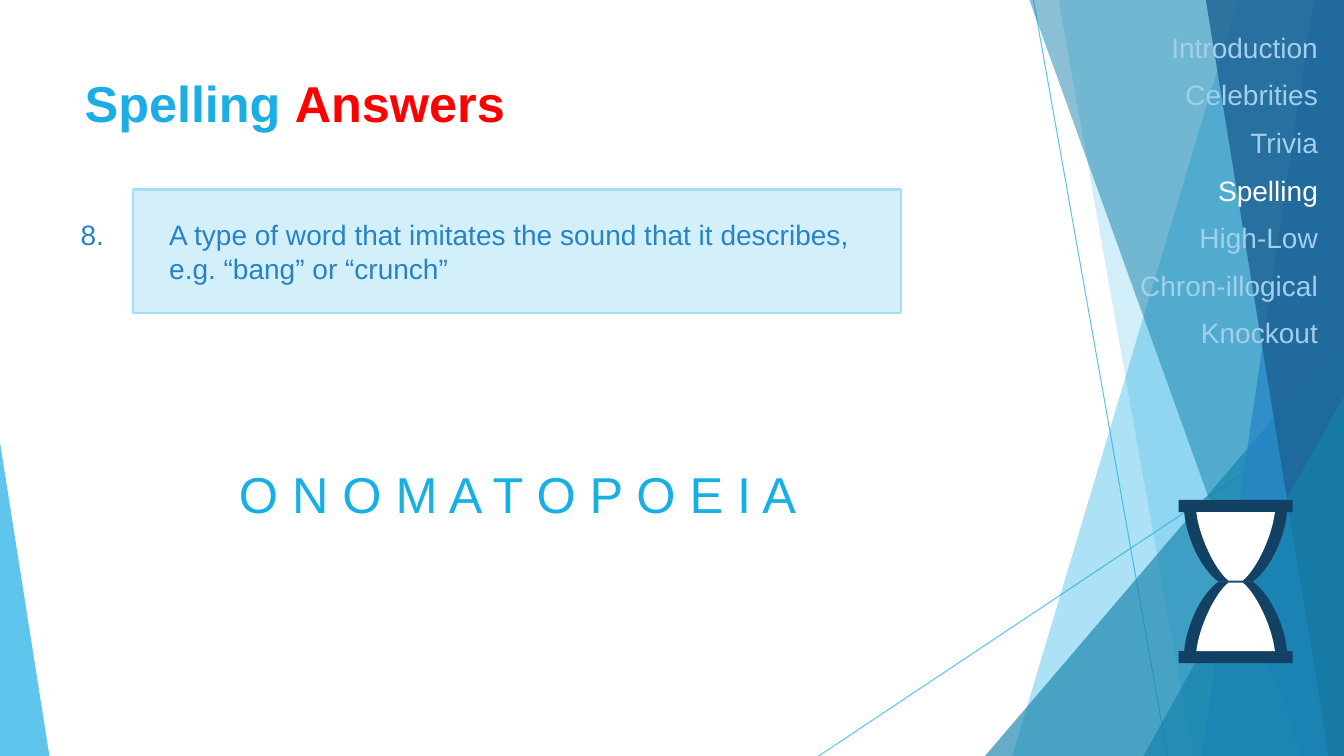
from pptx import Presentation
from pptx.util import Inches, Pt
from pptx.dml.color import RGBColor
from pptx.enum.shapes import MSO_CONNECTOR, MSO_SHAPE
from pptx.enum.text import MSO_ANCHOR, PP_ALIGN
from pptx.oxml.ns import qn
from lxml import etree

LINE = MSO_CONNECTOR.STRAIGHT
RECT = MSO_SHAPE.RECTANGLE
TOP, MIDDLE = MSO_ANCHOR.TOP, MSO_ANCHOR.MIDDLE
LEFT, CENTER, RIGHT = PP_ALIGN.LEFT, PP_ALIGN.CENTER, PP_ALIGN.RIGHT

W, H = 13.33, 7.5
COLORS = {
    "sky": "1CADE4", "teal": "1482AC", "blue": "2683C6", "navy": "1D6294",
    "red": "FF0000", "panel": "D2EFFA", "border": "A4DEF4", "answer": "17B0E4",
    "muted": "A3CEED", "white": "FFFFFF", "frame": "134163",
}
SECTIONS = ["Introduction", "Celebrities", "Trivia", "Spelling",
            "High-Low", "Chron-illogical", "Knockout"]

# Facets from back to front: corner points, colour, opacity in percent
FACETS = [
    ([(12.28, 0), (W, 0), (W, H), (10.04, H)], "sky", 36),
    ([(10.5, 0), (W, 0), (W, H), (11.83, H)], "sky", 20),
    ([(W, 3.33), (W, H), (9.77, H)], "teal", 66),
    ([(10.21, 0), (W, 0), (W, H), (12.91, H)], "teal", 50),
    ([(13.03, 0), (W, 0), (W, H), (11.92, H)], "blue", 70),
    ([(11.96, 0), (W, 0), (W, H), (13.18, H)], "navy", 80),
    ([(W, 3.93), (W, H), (11.34, H)], "teal", 66),
    ([(0, 4.39), (0.49, H), (0, H)], "sky", 70),
]
RAYS = [(10.25, 0, 11.58, H), (W, 4.03, 8.12, H)]


def rgb(name):
    return RGBColor.from_string(COLORS[name])


def set_alpha(shape, percent):
    color = next(shape._element.spPr.iter(qn("a:srgbClr")))
    etree.SubElement(color, qn("a:alpha"), val=str(percent * 1000))


def paint(shape, color, line=None):
    shape.shadow.inherit = False
    shape.fill.solid()
    shape.fill.fore_color.rgb = rgb(color)
    if line:
        shape.line.color.rgb = rgb(line)
        shape.line.width = Pt(1.5)
    else:
        shape.line.fill.background()
    return shape


def add_polygon(s, points, color):
    corners = [(Inches(x), Inches(y)) for x, y in points]
    builder = s.shapes.build_freeform(*corners[0])
    builder.add_line_segments(corners[1:], close=True)
    return paint(builder.convert_to_shape(), color)


def add_rect(s, x, y, w, h, color, line=None):
    box = [Inches(v) for v in (x, y, w, h)]
    return paint(s.shapes.add_shape(RECT, *box), color, line)


def add_run(p, text, color, size, bold=False):
    r = p.add_run()
    r.text = text
    formats = {"name": "Arial", "size": Pt(size), "bold": bold}
    for key, value in formats.items():
        setattr(r.font, key, value)
    r.font.color.rgb = rgb(color)


def add_text(s, x, y, w, h, lines, size, align=LEFT, anchor=TOP, gap=0, wrap=True):
    tf = s.shapes.add_textbox(*[Inches(v) for v in (x, y, w, h)]).text_frame
    tf.word_wrap = wrap
    tf.vertical_anchor = anchor
    for i, (text, color) in enumerate(lines):
        p = tf.paragraphs[0]
        if i:
            p = tf.add_paragraph()
            p.space_before = Pt(gap)
        p.alignment = align
        add_run(p, text, color, size)


# Background facets and thin rays
def add_background(s):
    for ray in RAYS:
        line = s.shapes.add_connector(LINE, *[Inches(v) for v in ray])
        line.line.color.rgb = rgb("sky")
        line.line.width = Pt(0.75)
        set_alpha(line, 70)
        etree.SubElement(line._element.spPr, qn("a:effectLst"))
    for points, color, opacity in FACETS:
        set_alpha(add_polygon(s, points, color), opacity)


def add_title(s, x, y, w, h):
    title = s.shapes.title
    title.left, title.top, title.width, title.height = map(Inches, (x, y, w, h))
    tf = title.text_frame
    tf.vertical_anchor = TOP
    p = tf.paragraphs[0]
    p.alignment = LEFT
    add_run(p, "Spelling ", "sky", 36, True)
    add_run(p, "Answers", "red", 36, True)


# Question panel with its number on the left, answer below
def add_question(s, x, y, w, h):
    add_rect(s, x, y, w, h, "panel", "border")
    question = ("A type of word that imitates the sound that it describes, "
                "e.g. “bang” or “crunch”")
    add_text(s, x + 0.26, y + 0.23, w - 0.49, 0.77, [(question, "blue")], 20)
    add_text(s, x - 0.62, y + 0.23, 0.45, 0.44, [("8.", "blue")], 20, wrap=False)
    add_text(s, x + 0.56, y + 2.68, 6.51, 0.66,
             [("O N O M A T O P O E I A", "answer")], 36, CENTER, MIDDLE)


def add_navigation(s, x, y, w, h, current):
    lines = [(name, "white" if name == current else "muted") for name in SECTIONS]
    add_text(s, x, y, w, h, lines, 20, RIGHT, gap=10)


def curve(a, b, c, d, steps=16):
    ts = [i / steps for i in range(steps + 1)]
    return [tuple((1 - t) ** 3 * p + 3 * t * (1 - t) ** 2 * q
                  + 3 * t * t * (1 - t) * r + t ** 3 * v
                  for p, q, r, v in zip(a, b, c, d)) for t in ts]


# Hourglass: two bars, and frame and glass mirrored about the waist
def add_hourglass(s, x, y, w, h):
    bar = 0.12
    cx, cy, reach = x + w / 2, y + h / 2, h / 2 - bar
    frame = curve((0.51, reach), (0.49, 0.46), (0.36, 0.14), (0.17, 0))
    glass = curve((0.39, reach), (0.36, 0.44), (0.2, 0.11), (0.07, 0.01))
    for bar_y in (y, y + h - bar):
        add_rect(s, x, bar_y, w, bar, "frame")
    for side, color in ((frame, "frame"), (glass, "white")):
        outline = side + [(-dx, dy) for dx, dy in reversed(side)]
        for sign in (-1, 1):
            points = [(cx + dx, cy + sign * dy) for dx, dy in outline]
            add_polygon(s, points, color)


def main():
    prs = Presentation()
    prs.slide_width, prs.slide_height = Inches(W), Inches(H)
    s = prs.slides.add_slide(prs.slide_layouts[5])
    add_background(s)
    add_title(s, 0.74, 0.67, 9.4, 1.44)
    add_question(s, 1.32, 1.88, 7.62, 1.23)
    add_navigation(s, 10.56, 0.25, 2.61, 4.52, "Spelling")
    add_hourglass(s, 11.69, 4.96, 1.13, 1.62)
    prs.save("out.pptx")


if __name__ == "__main__":
    main()
